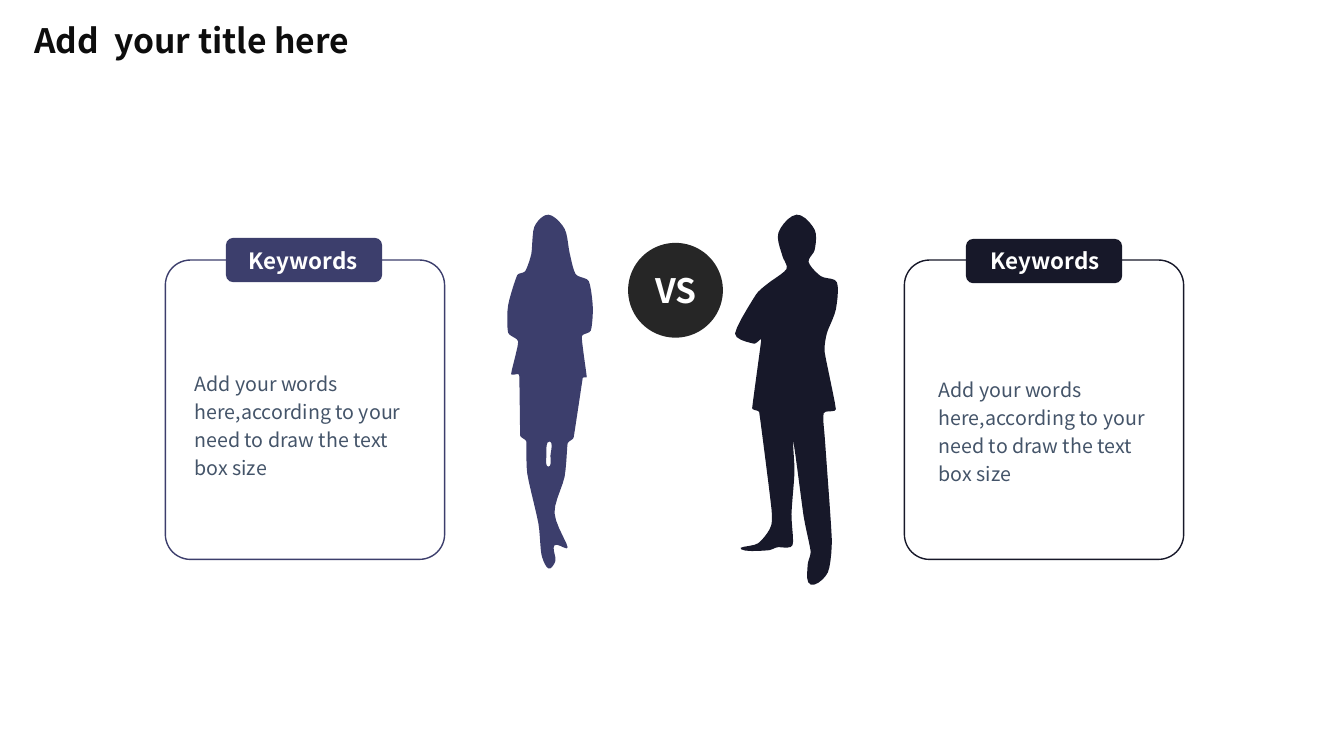
from lxml.etree import SubElement
from pptx import Presentation
from pptx.dml.color import RGBColor
from pptx.enum.shapes import MSO_SHAPE
from pptx.enum.text import MSO_AUTO_SIZE, PP_ALIGN
from pptx.oxml.ns import qn
from pptx.util import Pt

PX = 9144  # EMU in one px, 100 px to the inch
FACE = "Noto Sans CJK JP"
BLUE = RGBColor(0x3C, 0x3E, 0x6C)
NAVY = RGBColor(0x17, 0x18, 0x29)
DARK = RGBColor(0x26, 0x26, 0x26)
INK = RGBColor(0x0D, 0x0D, 0x0D)
SLATE = RGBColor(0x44, 0x54, 0x69)
WHITE = RGBColor(0xFF, 0xFF, 0xFF)

# Outlines as x, y points
WOMAN = [
    (544, 213), (560, 227), (565, 251), (571, 272), (584, 279), (588, 305),
    (586, 328), (577, 334), (582, 374), (578, 375), (569, 434), (563, 440),
    (560, 473), (550, 509), (563, 543), (550, 541), (551, 556), (544, 564),
    (537, 550), (534, 519), (523, 470), (522, 438), (516, 432), (515, 372),
    (507, 371), (514, 339), (504, 330), (504, 303), (513, 273), (521, 269),
    (527, 252), (530, 225)]
LEGS = [(545, 438), (546, 452), (544, 463), (542, 452)]  # gap between her legs
MAN = [
    (790, 213), (772, 231), (776, 254), (780, 267), (762, 281), (750, 292),
    (729, 331), (748, 341), (755, 337), (746, 405), (753, 409), (764, 495),
    (765, 521), (752, 539), (735, 545), (762, 546), (771, 543), (786, 541),
    (785, 510), (788, 468), (787, 439), (797, 512), (804, 547), (801, 561),
    (804, 580), (821, 568), (825, 535), (818, 434), (817, 410), (829, 406),
    (818, 350), (820, 331), (829, 307), (830, 280), (814, 274), (802, 260),
    (808, 248), (808, 228)]

deck = Presentation()
deck.slide_width, deck.slide_height = 1333 * PX, 750 * PX
slide = deck.slides.add_slide(deck.slide_layouts[6])
shapes = slide.shapes


def add_block(kind, box, fill, line=None):
    block = shapes.add_shape(kind, *(n * PX for n in box))
    block.shadow.inherit = False
    block.fill.solid()
    block.fill.fore_color.rgb = fill
    if line is None:
        block.line.fill.background()
    else:
        block.line.color.rgb = line
        block.line.width = Pt(1)
    return block


def add_text(text, box, size, color, bold=True, wrap=True):
    label = shapes.add_textbox(*(n * PX for n in box))
    frame = label.text_frame
    frame.word_wrap = wrap
    frame.auto_size = MSO_AUTO_SIZE.SHAPE_TO_FIT_TEXT
    para = frame.paragraphs[0]
    run = para.add_run()
    run.text = text
    style = {"name": FACE, "size": Pt(size), "bold": bold}
    for key, value in style.items():
        setattr(run.font, key, value)
    run.font.color.rgb = color
    return frame, para


# Title
add_text("Add  your title here", (24, 15, 379, 50), 24, INK)

# Two figures, with a smooth curve through the points of each outline
for loops, color in (([WOMAN, LEGS], BLUE), ([MAN], NAVY)):
    pen = None
    for loop in loops:
        dots = [complex(*dot) * PX for dot in loop]
        count = len(dots)
        pulls = []
        for i, dot in enumerate(dots):
            last, after = dots[i - 1], dots[(i + 1) % count]
            reach = 0.3 * min(abs(dot - last), abs(after - dot))
            pulls.append(reach * (after - last) / abs(after - last))
        line = []
        for i, a in enumerate(dots):
            j = (i + 1) % count
            d = dots[j]
            b, c = a + pulls[i], d - pulls[j]
            for t in (0.2, 0.4, 0.6, 0.8, 1):
                u = 1 - t
                dot = u**3 * a + 3 * u * u * t * b + 3 * u * t * t * c + t**3 * d
                line.append((round(dot.real), round(dot.imag)))
        x, y = line[-1]
        if pen is None:
            pen = shapes.build_freeform(x, y)
        else:
            pen.move_to(x, y)
        pen.add_line_segments(line, close=True)
    figure = pen.convert_to_shape()
    figure.shadow.inherit = False
    figure.fill.solid()
    figure.fill.fore_color.rgb = color
    figure.line.fill.background()

# Badge
add_block(MSO_SHAPE.OVAL, (623, 241, 94, 94), DARK)
_, para = add_text("VS", (638, 263, 65, 51), 24, WHITE, wrap=False)
para.alignment = PP_ALIGN.CENTER

# Cards: frame left, tab place, keyword place, body place, colour
CARDS = [
    (164, (224, 236), (237, 240), (193, 364), BLUE),
    (897, (958, 237), (973, 240), (931, 370), NAVY),
]
for left, tab, key, body, color in CARDS:
    card = add_block(MSO_SHAPE.ROUNDED_RECTANGLE, (left, 258, 277, 297), WHITE, color)
    card.adjustments[0] = 0.09
    tint = card.fill._xPr.find(qn("a:solidFill"))[0]
    SubElement(tint, qn("a:alpha")).set("val", "80000")
    add_block(MSO_SHAPE.ROUNDED_RECTANGLE, (*tab, 155, 44), color)
    add_text("Keywords", (*key, 130, 37), 16, WHITE)
    frame, para = add_text(
        "Add your words here,according to your need to draw the text box size",
        (*body, 216, 113), 14, SLATE, bold=False)
    for side in ("left", "top", "right", "bottom"):
        setattr(frame, "margin_" + side, 0)
    para.line_spacing = 1.2

deck.save("out.pptx")
